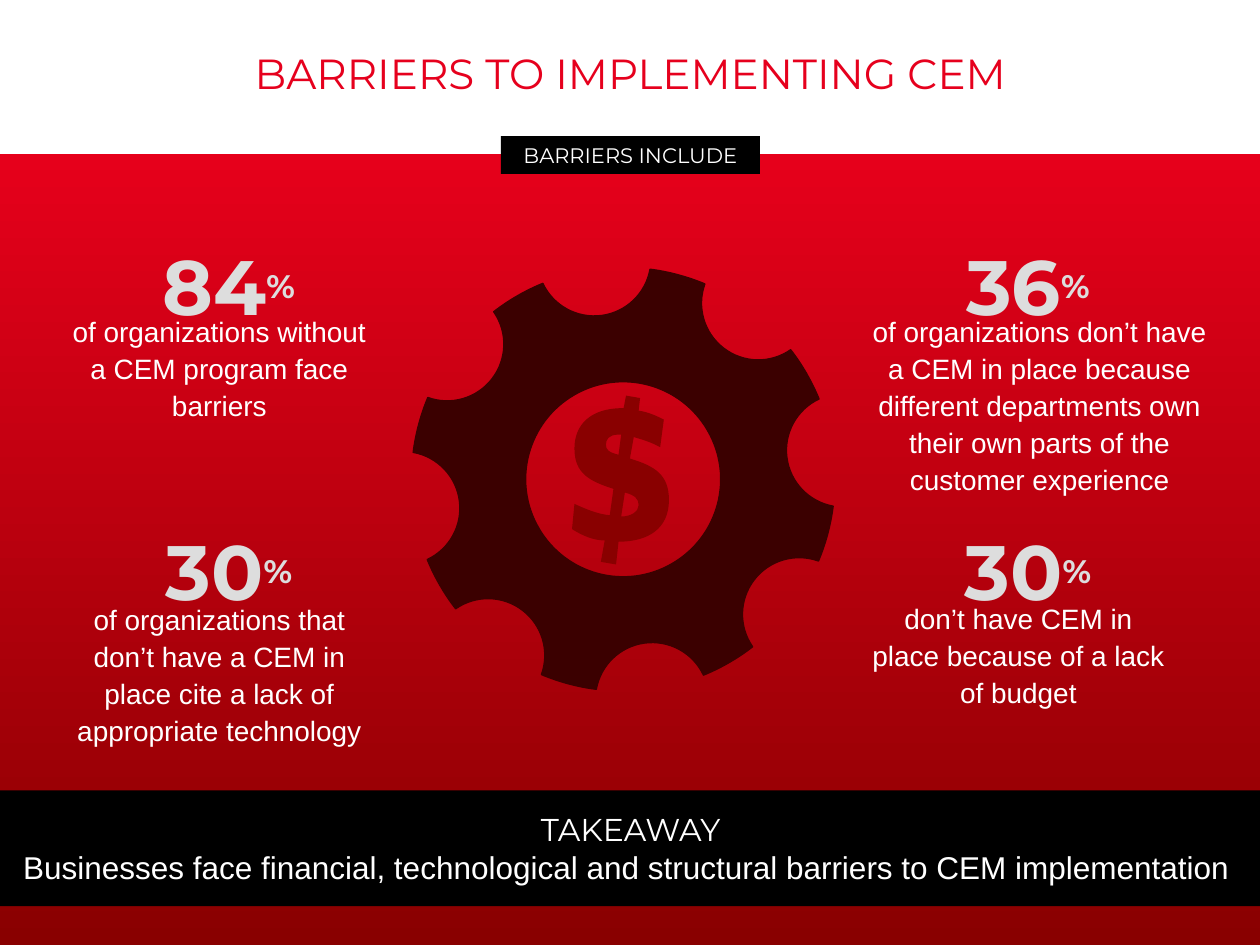
"""Build the slide on barriers to implementing CEM."""
import copy
import math

from lxml import etree
from pptx import Presentation, util as u
from pptx.dml.color import RGBColor
from pptx.enum import shapes, text
from pptx.oxml import ns

COLORS = {
    "title": "E6001D",
    "bright": "E6001B",
    "dark": "890000",
    "gear": "3B0000",
    "shade": "C7C7C7",
    "number": "DDDDDD",
    "white": "FFFFFF",
    "black": "000000",
}

RED_GRADIENT = [(0, "dark"), (1, "bright")]
PAPER_GRADIENT = [(0, "shade"), (0.18, "number"), (0.49, "white")]

STATS = [
    ("84", (82.8, 132.2), "of organizations without a CEM program face barriers",
     (39.6, 173.9, 171.4, 67.7)),
    ("30", (82.8, 295.2), "of organizations that don’t have a CEM in place cite a lack of "
     "appropriate technology", (39.6, 338.1, 171.4, 89.3)),
    ("36", (539.5, 132.2), "of organizations don’t have a CEM in place because different "
     "departments own their own parts of the customer experience",
     (495, 173.9, 198, 110.2)),
    ("30", (539.5, 295.2), "don’t have CEM in place because of a lack of budget",
     (496.2, 337.7, 171.4, 67.7)),
]

DOLLAR = [
    [(365, 234.7), (370.1, 235.4, 375.1, 237.6, 379.4, 239.8), (377.3, 255.6),
     (372.2, 252.7, 367.2, 251.3, 362.2, 249.8), (360, 262.1),
     (374.4, 266.4, 382.3, 271.4, 382.3, 285.8),
     (382.3, 302.4, 370.1, 309.6, 353.5, 309.6), (352.1, 322.6), (343.4, 321.1),
     (345.6, 308.9), (339.1, 308.9, 332.6, 306, 326.9, 302.4), (328.3, 288),
     (336.2, 291.6, 342, 293.8, 348.5, 294.5), (350.6, 279.4),
     (337, 275, 328.3, 270.7, 328.3, 256.3),
     (328.3, 242.6, 337.7, 233.3, 355.7, 233.3), (356.4, 233.3), (357.8, 226.1),
     (365.8, 227.5)],
    [(353.5, 259.9), (355, 248.4), (353.5, 248.4),
     (347.8, 248.4, 346.3, 251.3, 346.3, 254.2),
     (346.3, 257, 347.8, 258.5, 353.5, 259.9)],
    [(357.1, 281.5), (355, 295.2), (360.7, 295.2, 365, 292.3, 365, 288.7),
     (365, 285.1, 362.9, 283, 357.1, 281.5)],
]


def color(name):
    """Return the named colour."""
    return RGBColor.from_string(COLORS[name])


def write(paragraph, content, size=16, font="Arial", fill="white", bold=False, baseline=0):
    """Add a formatted run to a paragraph."""
    run = paragraph.add_run()
    run.text = content
    run.font.size = u.Pt(size)
    run.font.name = font
    run.font.bold = bold
    run.font.color.rgb = color(fill)
    if baseline:
        run.font._element.set("baseline", str(baseline * 1000))


def polar(center, radius, angle):
    """Return the point at an angle on a circle."""
    return center[0] + radius * math.cos(angle), center[1] + radius * math.sin(angle)


def arc(center, radius, start, sweep, pieces=1):
    """Return an arc as cubic curves."""
    step = sweep / pieces
    reach = math.hypot(radius, radius * 4 / 3 * math.tan(step / 4))
    lean = math.atan(4 / 3 * math.tan(step / 4))
    angles = [start + i * step for i in range(pieces)]
    return [(*polar(center, reach, a + lean), *polar(center, reach, a + step - lean),
             *polar(center, radius, a + step)) for a in angles]


def half_gear(center, start, outer=121, hub=55.7, notch=32.4, distance=126.8):
    """Return half a gear with four round notches."""
    tooth = math.pi / 4
    gap = math.acos((outer ** 2 + distance ** 2 - notch ** 2) / (2 * outer * distance))
    swing = math.acos((distance - outer * math.cos(gap)) / notch)
    land = tooth / 2 - gap
    outline = [polar(center, outer, start)]
    for index in range(4):
        angle = start + index * tooth
        middle = angle + tooth / 2
        outline += arc(center, outer, angle, land)
        outline += arc(polar(center, distance, middle), notch,
                       middle + math.pi + swing, -2 * swing, 2)
        outline += arc(center, outer, middle + gap, land)
    outline.append(polar(center, hub, start + math.pi))
    return outline + arc(center, hub, start + math.pi, -math.pi, 2)


class SlideBuilder:
    """Hold the style and the current slide."""

    heading = "Montserrat"

    def __init__(self, presentation):
        """Add a blank slide."""
        self.slide = presentation.slides.add_slide(presentation.slide_layouts[6])

    def frame(self, shape, wrap=True):
        """Prepare a text frame and return its first paragraph."""
        frame = shape.text_frame
        frame.word_wrap = wrap
        frame.vertical_anchor = text.MSO_ANCHOR.MIDDLE
        paragraph = frame.paragraphs[0]
        paragraph.alignment = text.PP_ALIGN.CENTER
        return paragraph

    def textbox(self, box):
        """Add a text box."""
        return self.slide.shapes.add_textbox(*map(u.Pt, box))

    def rectangle(self, box, fill="black", gradient=None):
        """Add a rectangle with a plain fill or an upward gradient."""
        shape = self.slide.shapes.add_shape(shapes.MSO_SHAPE.RECTANGLE, *map(u.Pt, box))
        shape.shadow.inherit = False
        shape.line.fill.background()
        if gradient:
            shape.fill.gradient()
            shape.fill.gradient_angle = 90
            stops = next(shape._element.iter(ns.qn("a:gsLst")))
            for _ in gradient[2:]:
                stops.append(copy.deepcopy(stops[-1]))
            for stop, (position, name) in zip(shape.fill.gradient_stops, gradient):
                stop.position = position
                stop.color.rgb = color(name)
        else:
            shape.fill.solid()
            shape.fill.fore_color.rgb = color(fill)
        return shape

    def outline(self, contours, fill, parent=None):
        """Add a filled freeform of lines and cubic curves."""
        ends = [[tuple(map(u.Pt, segment[-2:])) for segment in contour]
                for contour in contours]
        builder = (parent or self.slide).shapes.build_freeform(*ends[0][0])
        for index, points in enumerate(ends):
            if index:
                builder.move_to(*points[0])
            builder.add_line_segments(points[1:], close=True)
        shape = builder.convert_to_shape()
        segments = [segment for contour in contours for segment in contour[1:]]
        for line, segment in zip(list(shape._element.iter(ns.qn("a:lnTo"))), segments):
            if len(segment) == 6:
                curve = etree.Element(ns.qn("a:cubicBezTo"))
                for x, y in zip(segment[::2], segment[1::2]):
                    etree.SubElement(curve, ns.qn("a:pt"), x=str(u.Pt(x) - shape.left),
                                     y=str(u.Pt(y) - shape.top))
                line.getparent().replace(line, curve)
        shape.shadow.inherit = False
        shape.fill.solid()
        shape.fill.fore_color.rgb = color(fill)
        shape.line.fill.background()
        return shape

    def gear(self):
        """Add a gear as a group of two tilted halves."""
        group = self.slide.shapes.add_group_shape()
        for center, start in (((361.3, 269.9), 135), ((350.9, 277.9), -45)):
            half = self.outline([half_gear(center, math.radians(start))], "gear", group)
            half.rotation = 15
            half.line.color.rgb = color("gear")
            half.line.width = u.Pt(0.75)

    def stat(self, number, position, caption, caption_box):
        """Add a large percentage and its caption."""
        paragraph = self.frame(self.textbox((*position, 95.8, 60.5)), wrap=False)
        style = {"font": self.heading, "fill": "number", "bold": True}
        write(paragraph, number, size=44, **style)
        write(paragraph, "%", size=32, baseline=30, **style)
        shape = self.textbox(caption_box)
        frame = shape.text_frame
        frame.margin_left = frame.margin_right = frame.margin_bottom = 0
        paragraph = self.frame(shape)
        paragraph.line_spacing = 1.1
        write(paragraph, caption)


def main():
    """Build and save the slide."""
    presentation = Presentation()
    presentation.slide_width, presentation.slide_height = u.Pt(720), u.Pt(540)
    builder = SlideBuilder(presentation)
    heading = builder.heading
    builder.rectangle((0, -0.7, 720, 540.7), gradient=PAPER_GRADIENT)
    builder.rectangle((0, 87.8, 720, 452.2), gradient=RED_GRADIENT)
    title = builder.frame(builder.textbox((117.8, 23.8, 484.6, 36)), wrap=False)
    write(title, "BARRIERS TO IMPLEMENTING CEM", size=24, font=heading, fill="title")
    label = builder.frame(builder.rectangle((286.2, 77.8, 148, 21.6)), wrap=False)
    write(label, "BARRIERS INCLUDE", size=12, font=heading)
    takeaway = builder.frame(builder.rectangle((0, 451.6, 720.7, 66.2)))
    write(takeaway, "TAKEAWAY", size=18, font=heading)
    takeaway.add_line_break()
    write(takeaway, "Businesses face financial, technological and structural barriers "
          "to CEM implementation ", size=18)
    for stat in STATS:
        builder.stat(*stat)
    builder.outline(DOLLAR, "dark")
    builder.gear()
    presentation.save("out.pptx")


if __name__ == "__main__":
    main()
